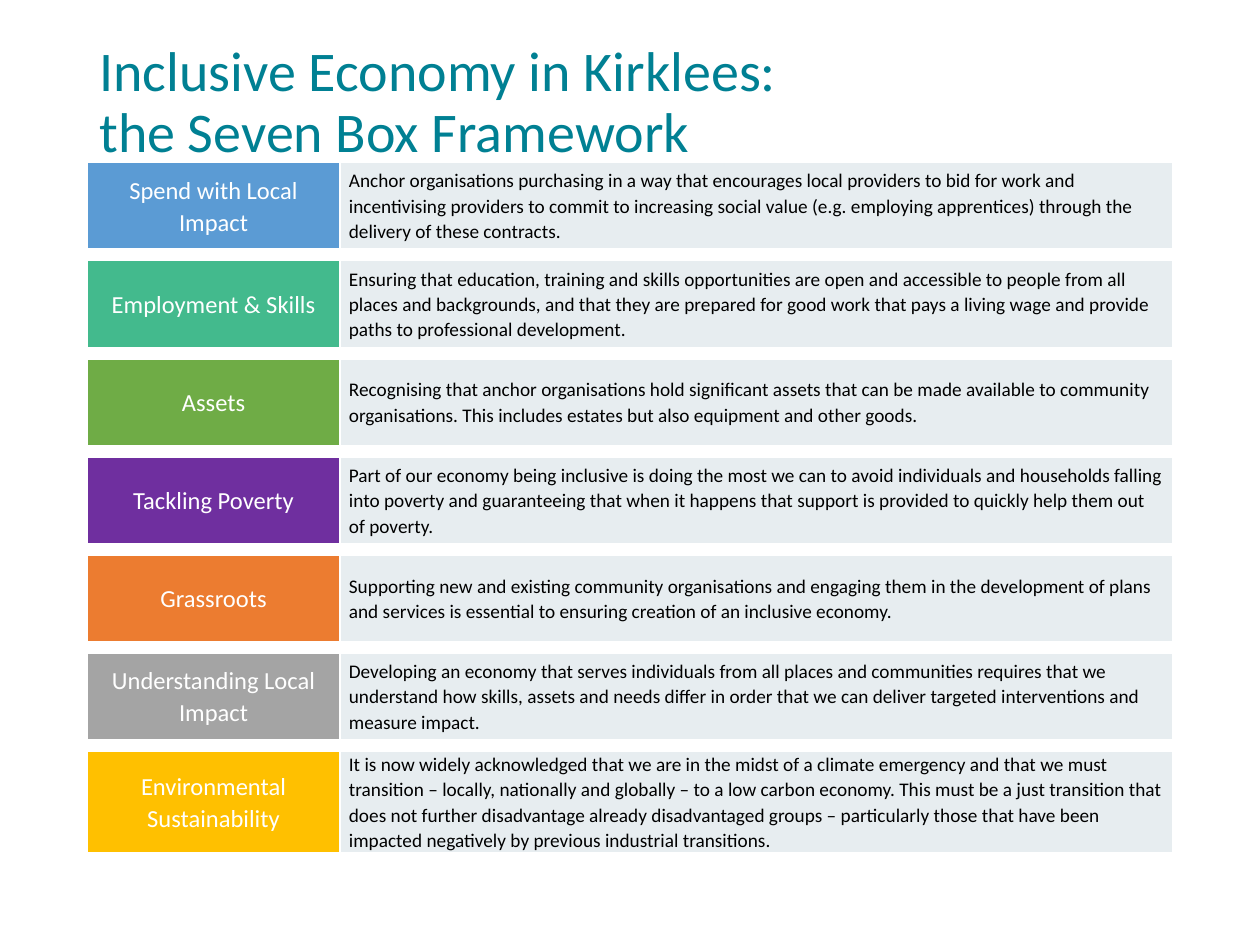
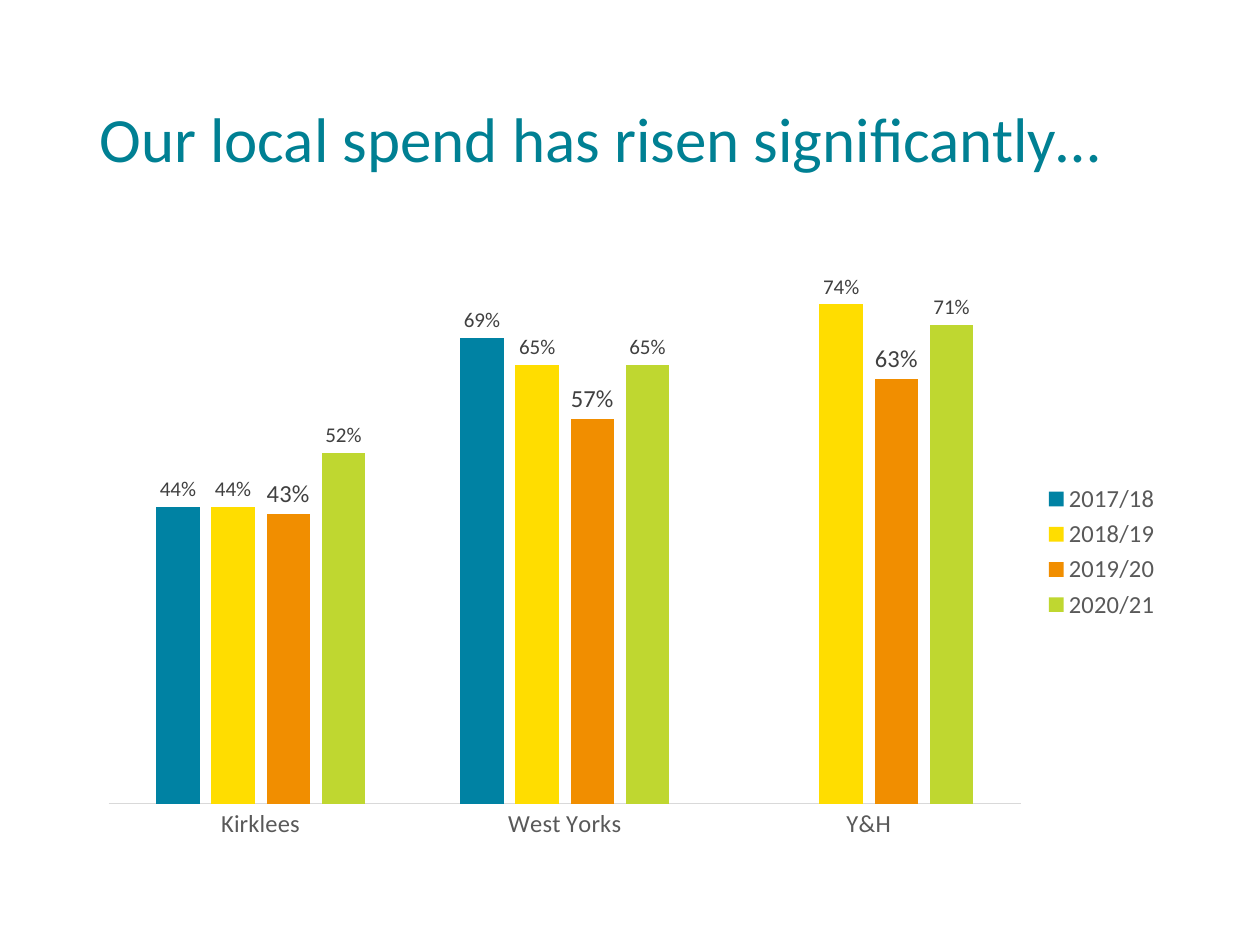
from dataclasses import dataclass

from lxml import etree
from pptx import Presentation
from pptx.chart.data import CategoryChartData
from pptx.dml.color import RGBColor
from pptx.enum import chart as ch, text as tx
from pptx.oxml import ns, parse_xml
from pptx.util import Pt


@dataclass(frozen=True)
class Theme:
    font: str = "Calibri"
    title: str = "008093"
    white: str = "FFFFFF"
    black: str = "000000"
    panel: str = "E7EDF0"
    axis: str = "595959"
    rule: str = "D9D9D9"
    label: str = "404040"
    head: int = 14
    body: int = 11
    left: float = 49.7
    width: float = 620.6


T = Theme()

BOXES = [
    ("Spend with Local Impact", "5B9BD4",
     "Anchor organisations purchasing in a way that encourages local providers to bid for work and "
     "incentivising providers to commit to increasing social value (e.g. employing apprentices) "
     "through the delivery of these contracts."),
    ("Employment & Skills", "43BA8D",
     "Ensuring that education, training and skills opportunities are open and accessible to people "
     "from all places and backgrounds, and that they are prepared for good work that pays a living "
     "wage and provide paths to professional development."),
    ("Assets", "6FAC46",
     "Recognising that anchor organisations hold significant assets that can be made available to "
     "community organisations. This includes estates but also equipment and other goods."),
    ("Tackling Poverty", "6F2F9F",
     "Part of our economy being inclusive is doing the most we can to avoid individuals and "
     "households falling into poverty and guaranteeing that when it happens that support is "
     "provided to quickly help them out of poverty."),
    ("Grassroots", "EC7C30",
     "Supporting new and existing community organisations and engaging them in the development of "
     "plans and services is essential to ensuring creation of an inclusive economy."),
    ("Understanding Local Impact", "A4A4A4",
     "Developing an economy that serves individuals from all places and communities requires that "
     "we understand how skills, assets and needs differ in order that we can deliver targeted "
     "interventions and measure impact."),
    ("Environmental Sustainability", "FFC000",
     "It is now widely acknowledged that we are in the midst of a climate emergency and that we "
     "must transition – locally, nationally and globally – to a low carbon economy. This must be a "
     "just transition that does not further disadvantage already disadvantaged groups – "
     "particularly those that have been impacted negatively by previous industrial transitions."),
]

AREAS = ["Kirklees", "West Yorks", "Y&H"]
# Year, share of spend by area, bar colour, label size
SPEND = [
    ("2017/18", (0.44, 0.69, None), "0082A3", 12),
    ("2018/19", (0.44, 0.65, 0.74), "FFDD00", 12),
    ("2019/20", (0.43, 0.57, 0.63), "F18E00", 14),
    ("2020/21", (0.52, 0.65, 0.71), "BFD730", 12),
]


def style(font, size, color):
    font.name, font.size = T.font, Pt(size)
    font.color.rgb = RGBColor.from_string(color)


def paint(fill, color):
    fill.solid()
    fill.fore_color.rgb = RGBColor.from_string(color)


def write(para, words, size, color, space):
    para.line_spacing = space
    for i, line in enumerate(words.split("\n")):
        if i:
            para.add_line_break()
        run = para.add_run()
        run.text = line
        style(run.font, size, color)


def title(slide, box, words, size):
    frame = slide.shapes.add_textbox(*map(Pt, box)).text_frame
    frame.word_wrap = True
    frame.auto_size = tx.MSO_AUTO_SIZE.NONE
    frame.vertical_anchor = tx.MSO_ANCHOR.MIDDLE
    write(frame.paragraphs[0], words, size, T.title, 0.9)


def border(cell):
    props = cell._tc.get_or_add_tcPr()
    for i, side in enumerate("LRTB"):
        props.insert(i, parse_xml(
            f'<a:ln{side} {ns.nsdecls("a")} w="12700"><a:solidFill>'
            f'<a:srgbClr val="{T.white}"/></a:solidFill></a:ln{side}>'))


def fill_cell(cell, words, size, color, back, align):
    cell.margin_left = cell.margin_right = Pt(5)
    cell.vertical_anchor = tx.MSO_ANCHOR.MIDDLE
    paint(cell.fill, back)
    para = cell.text_frame.paragraphs[0]
    para.alignment = align
    write(para, words, size, color, 1.07)


def spacer(cell):
    cell.fill.background()
    mark = etree.SubElement(cell.text_frame.paragraphs[0]._p, ns.qn("a:endParaRPr"))
    mark.set("sz", "100")


def boxes(slide, box):
    """Seven coloured headings with their text, parted by thin rows."""
    high, gap, first = 49.5, 6.6, 144.7
    count = 2 * len(BOXES) - 1
    table = slide.shapes.add_table(count, 2, *map(Pt, box)).table
    table.first_row = table.horz_banding = False
    for col, wide in zip(table.columns, (first, box[2] - first)):
        col.width = Pt(wide)
    for i, row in enumerate(table.rows):
        row.height = Pt(gap if i % 2 else high)
        for cell in row.cells:
            cell.margin_top = cell.margin_bottom = 0
            border(cell)
            if i % 2:
                spacer(cell)
    for i, (name, color, words) in enumerate(BOXES):
        fill_cell(table.cell(2 * i, 0), name, T.head, T.white, color, tx.PP_ALIGN.CENTER)
        fill_cell(table.cell(2 * i, 1), words, T.body, T.black, T.panel, tx.PP_ALIGN.LEFT)


def place_plot(chart, x, y, w, h):
    """Fix the inner plot as fractions of the chart."""
    area = chart._chartSpace.chart.plotArea
    for old in area.findall(ns.qn("c:layout")):
        area.remove(old)
    parts = "".join(f'<c:{k} val="{v}"/>' for k, v in
                    (("xMode", "edge"), ("yMode", "edge"), ("x", x), ("y", y), ("w", w), ("h", h)))
    area.insert(0, parse_xml(
        f'<c:layout {ns.nsdecls("c")}><c:manualLayout><c:layoutTarget val="inner"/>'
        f'{parts}</c:manualLayout></c:layout>'))


def bars(slide, box):
    """Clustered columns of local spend by area and year."""
    data = CategoryChartData(number_format="0%")
    data.categories = AREAS
    for year, vals, *_ in SPEND:
        data.add_series(year, vals)
    chart = slide.shapes.add_chart(
        ch.XL_CHART_TYPE.COLUMN_CLUSTERED, *map(Pt, box), data).chart
    style(chart.font, 10, T.black)
    chart.has_title = False
    place_plot(chart, 0.02, 0.02, 0.84, 0.9)

    # Axes
    base, scale = chart.category_axis, chart.value_axis
    base.major_tick_mark = base.minor_tick_mark = ch.XL_TICK_MARK.NONE
    style(base.tick_labels.font, T.head, T.axis)
    paint(base.format.line.fill, T.rule)
    base.format.line.width = Pt(0.75)
    scale.visible = scale.has_major_gridlines = False
    scale.minimum_scale, scale.maximum_scale, scale.major_unit = 0, 0.8, 0.2

    # Legend
    chart.has_legend = True
    chart.legend.position = ch.XL_LEGEND_POSITION.RIGHT
    chart.legend.include_in_layout = False
    style(chart.legend.font, T.head, T.axis)

    # Columns and labels
    plot = chart.plots[0]
    plot.gap_width, plot.overlap, plot.vary_by_categories = 219, -27, False
    for item, (_, _, color, size) in zip(plot.series, SPEND):
        paint(item.format.fill, color)
        item.invert_if_negative = False
        tags = item.data_labels
        tags.show_value = True
        tags.number_format, tags.number_format_is_linked = "0%", False
        tags.position = ch.XL_LABEL_POSITION.OUTSIDE_END
        style(tags.font, size, T.label)


def main():
    deck = Presentation()
    deck.slide_width, deck.slide_height = Pt(720), Pt(540)
    blank = deck.slide_layouts[6]

    slide = deck.slides.add_slide(blank)
    title(slide, (T.left, 27.4, T.width, 64),
          "Inclusive Economy in Kirklees:\nthe Seven Box Framework", 32)
    boxes(slide, (T.left, 92.9, T.width, 392.4))

    slide = deck.slides.add_slide(blank)
    title(slide, (T.left, 28.8, T.width, 104.4), "Our local spend has risen significantly…", 36)
    bars(slide, (T.left, 144, T.width, 342.7))

    deck.save("out.pptx")


if __name__ == "__main__":
    main()
